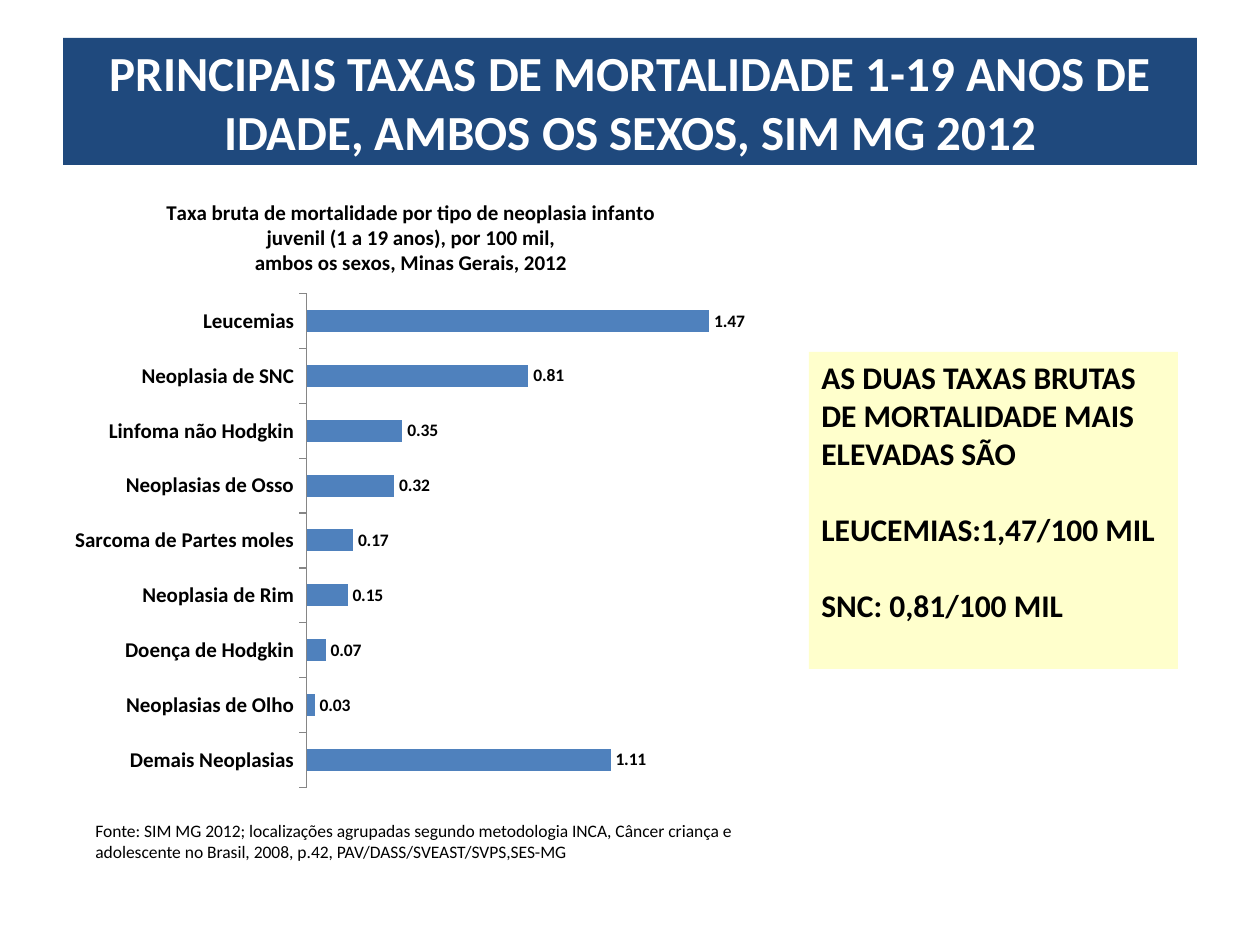
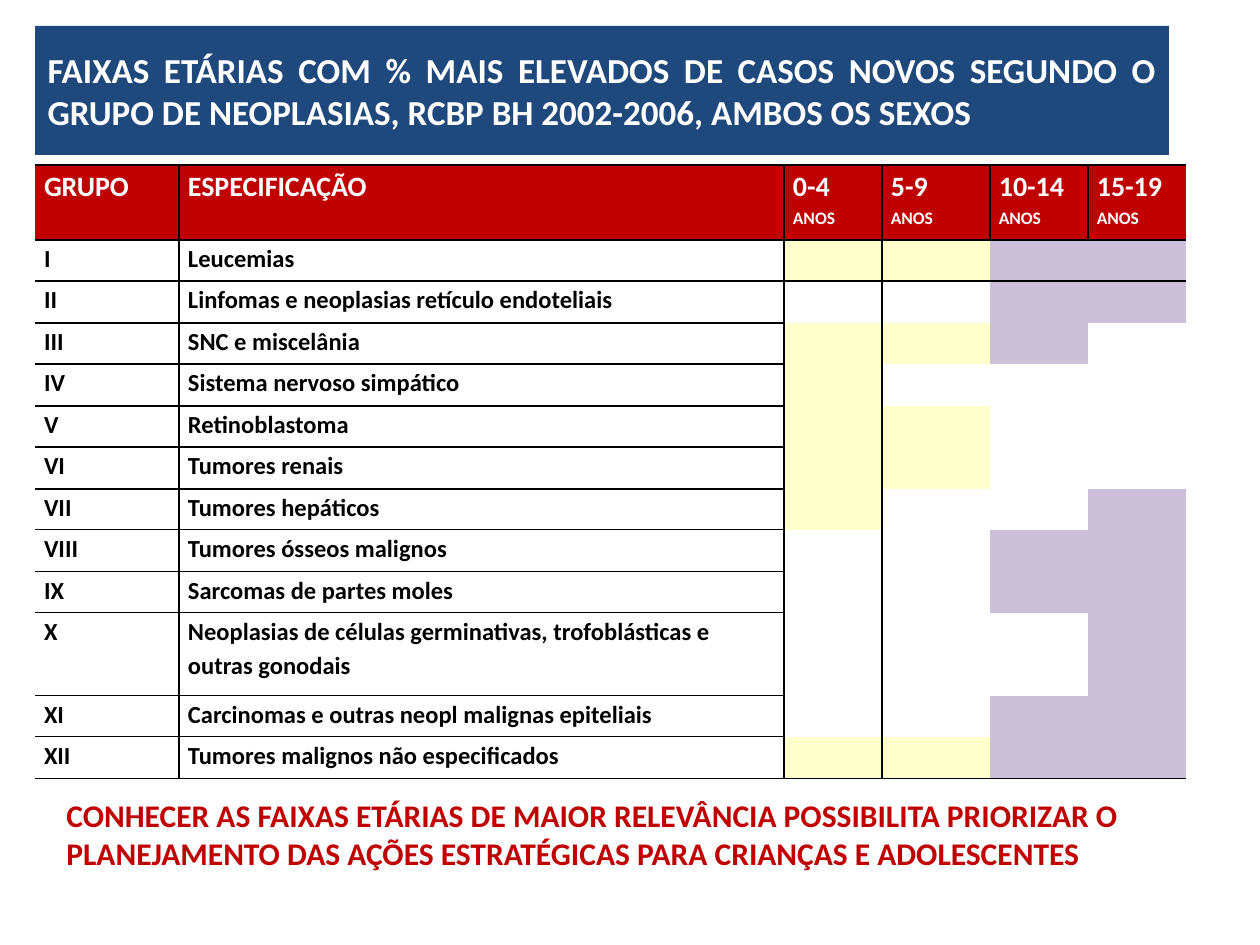
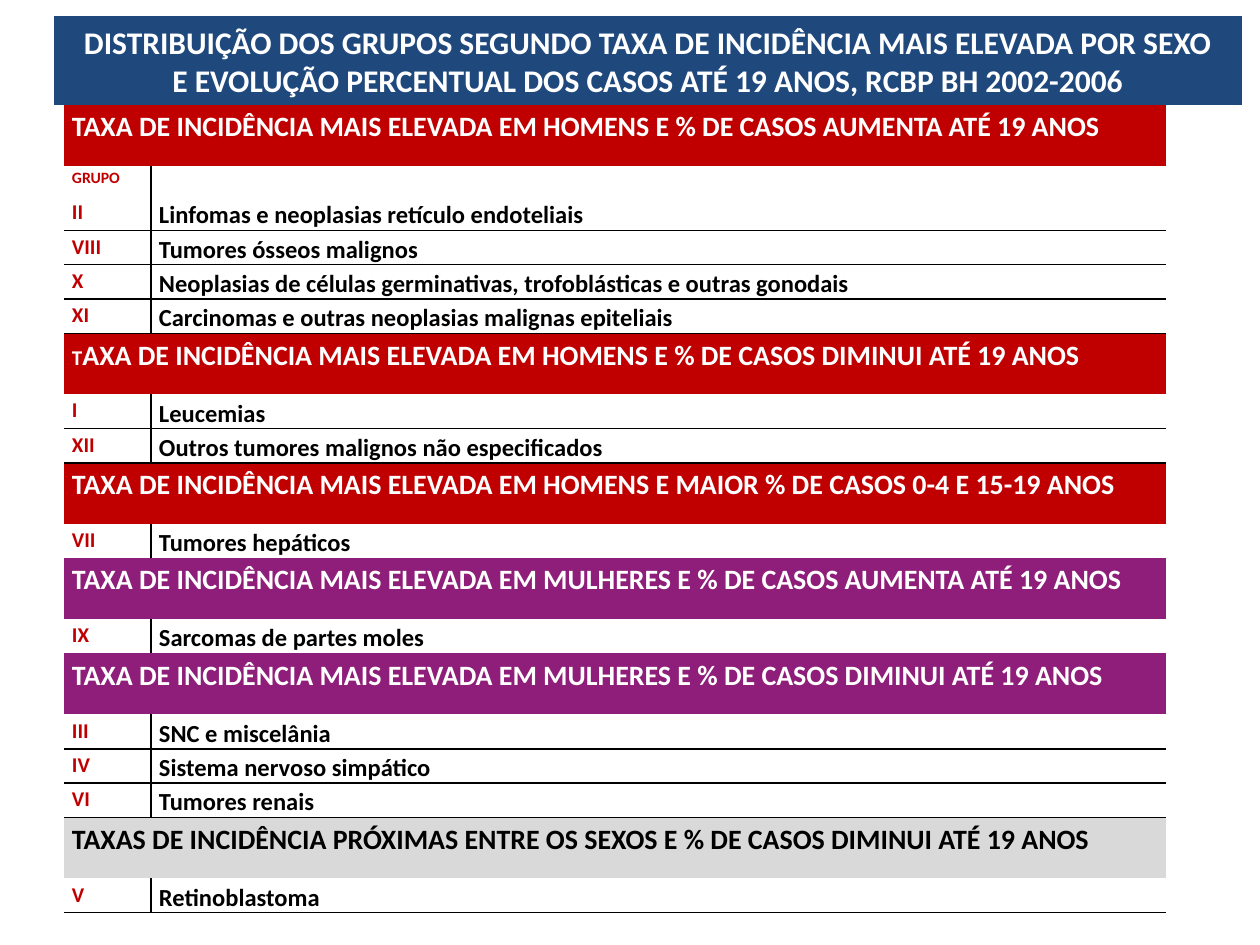
from dataclasses import dataclass

from lxml.etree import SubElement
from pptx import Presentation
from pptx.chart.data import CategoryChartData
from pptx.dml.color import RGBColor
from pptx.enum.chart import (XL_CHART_TYPE, XL_LABEL_POSITION, XL_TICK_LABEL_POSITION,
                             XL_TICK_MARK)
from pptx.enum.shapes import MSO_SHAPE
from pptx.enum.text import MSO_ANCHOR, MSO_AUTO_SIZE, PP_ALIGN
from pptx.oxml import parse_xml
from pptx.oxml.ns import nsdecls, qn
from pptx.util import Emu, Pt


@dataclass(frozen=True)
class Theme:
    font: str = "Calibri"
    # Colours
    navy: str = "1F497D"
    red: str = "C00000"
    purple: str = "8E1E79"
    gray: str = "D9D9D9"
    axis: str = "868686"
    bar: str = "4F81BD"
    yellow: str = "FFFFCC"
    lilac: str = "CCC0D9"
    black: str = "000000"
    white: str = "FFFFFF"
    # Type sizes
    headline: int = 28
    subhead: int = 20
    callout: int = 18
    head: int = 16
    row: int = 14
    label: int = 12
    note: int = 10
    tiny: int = 9


T = Theme()
PX_PER_INCH = 126
TITLE_ONLY = 5
NO_STYLE = "{2D5ABB26-0587-4C30-8999-92F81FD0307C}"


def px(n):
    return Emu(round(n * 914400 / PX_PER_INCH))


def rgb(code):
    return RGBColor.from_string(code)


def style(font, size, color, bold=True):
    font.name = T.font
    font.size = Pt(size)
    font.bold = bold
    font.color.rgb = rgb(color)


class Deck:
    """Holds the presentation and the slide being built."""

    def __init__(self):
        self.prs = Presentation()
        self.prs.slide_width = px(1260)
        self.prs.slide_height = px(945)
        self.slide = None

    def add_slide(self):
        self.slide = self.prs.slides.add_slide(self.prs.slide_layouts[TITLE_ONLY])

    def put_text(self, sp, lines, size, color, bold=True, align=PP_ALIGN.LEFT,
                 anchor=MSO_ANCHOR.TOP, gap=0):
        tf = sp.text_frame
        tf.word_wrap = True
        tf.auto_size = MSO_AUTO_SIZE.NONE
        tf.vertical_anchor = anchor
        for i, line in enumerate(lines):
            p = tf.add_paragraph() if i else tf.paragraphs[0]
            p.text = line
            p.alignment = align
            p.space_before = Pt(gap if i else 0)
            style(p.font, size, color, bold)

    def title(self, box, lines, size, align=PP_ALIGN.CENTER):
        sp = self.slide.shapes.title
        sp.left, sp.top, sp.width, sp.height = map(px, box)
        sp.fill.solid()
        sp.fill.fore_color.rgb = rgb(T.navy)
        self.put_text(sp, lines, size, T.white, align=align, anchor=MSO_ANCHOR.MIDDLE)

    def panel(self, box, lines, size, color=T.black, fill=T.white, bold=True, gap=0):
        sp = self.slide.shapes.add_shape(MSO_SHAPE.RECTANGLE, *map(px, box))
        sp.shadow.inherit = False
        sp.fill.solid()
        sp.fill.fore_color.rgb = rgb(fill)
        sp.line.fill.background()
        self.put_text(sp, lines, size, color, bold, gap=gap)

    def table(self, left, top, widths, heights):
        frame = self.slide.shapes.add_table(
            len(heights), len(widths), px(left), px(top), px(sum(widths)), px(sum(heights)))
        tbl = frame.table
        tbl.first_row = tbl.horz_banding = False
        frame._element.find(".//" + qn("a:tableStyleId")).text = NO_STYLE
        for col, width in zip(tbl.columns, widths):
            col.width = px(width)
        for row, height in zip(tbl.rows, heights):
            row.height = px(height)
        return tbl

    def cell(self, cell, lines=(), color=T.black, fill=T.white, sides="", inset=9):
        """Each line is a list of (text, size) runs; sides is any of L, R, T, B."""
        cell.fill.solid()
        cell.fill.fore_color.rgb = rgb(fill)
        cell.margin_left = cell.margin_right = px(inset)
        cell.margin_top = cell.margin_bottom = 0
        tf = cell.text_frame
        tf.paragraphs[0].font.size = Pt(T.tiny)
        for i, runs in enumerate(lines):
            p = tf.add_paragraph() if i else tf.paragraphs[0]
            p.line_spacing = 1.15
            for text, size in runs:
                r = p.add_run()
                r.text = text
                style(r.font, size, color)
        tc_pr = cell._tc.get_or_add_tcPr()
        for i, side in enumerate(s for s in "LRTB" if s in sides):
            tc_pr.insert(i, parse_xml(
                f'<a:ln{side} {nsdecls("a")} w="12700"><a:solidFill>'
                f'<a:srgbClr val="{T.black}"/></a:solidFill></a:ln{side}>'))

    def bar_chart(self, box, title, data, plot):
        chart_data = CategoryChartData(number_format="0.00")
        chart_data.categories = list(data)
        chart_data.add_series("Series 1", list(data.values()))
        chart = self.slide.shapes.add_chart(
            XL_CHART_TYPE.BAR_CLUSTERED, *map(px, box), chart_data).chart
        style(chart.font, T.note, T.black, bold=False)
        chart.has_legend = False

        tf = chart.chart_title.text_frame
        for i, line in enumerate(title):
            p = tf.add_paragraph() if i else tf.paragraphs[0]
            p.text = line
            style(p.font, T.label, T.black)
        chart.chart_title.include_in_layout = False

        cat = chart.category_axis
        cat.reverse_order = True
        cat.major_tick_mark = XL_TICK_MARK.OUTSIDE
        cat.tick_label_position = XL_TICK_LABEL_POSITION.LOW
        cat.format.line.color.rgb = rgb(T.axis)
        style(cat.tick_labels.font, T.label, T.black)
        val = chart.value_axis
        val.minimum_scale, val.maximum_scale = 0, 1.6
        val.has_major_gridlines = False
        val.visible = False

        bars = chart.plots[0]
        bars.vary_by_categories = False
        bars.gap_width = 150
        fill = bars.series[0].format.fill
        fill.solid()
        fill.fore_color.rgb = rgb(T.bar)
        bars.has_data_labels = True
        labels = bars.data_labels
        labels.show_value = True
        labels.number_format = "0.00"
        labels.number_format_is_linked = False
        labels.position = XL_LABEL_POSITION.OUTSIDE_END
        style(labels.font, T.note, T.black)

        # Fixed inner plot area, as fractions of the chart
        area = chart._chartSpace.find(".//" + qn("c:plotArea"))
        for old in area.findall(qn("c:layout")):
            area.remove(old)
        layout = parse_xml(f'<c:layout {nsdecls("c")}><c:manualLayout/></c:layout>')
        area.insert(0, layout)
        values = dict(layoutTarget="inner", xMode="edge", yMode="edge",
                      **dict(zip("xywh", plot)))
        for tag, value in values.items():
            SubElement(layout[0], qn("c:" + tag)).set("val", str(value))


def mortality_slide(deck):
    deck.add_slide()
    deck.title((63, 38, 1134, 127), [
        "PRINCIPAIS TAXAS DE MORTALIDADE 1-19 ANOS DE IDADE, AMBOS OS SEXOS, SIM MG 2012",
    ], T.headline)
    rates = {
        "Leucemias": 1.47,
        "Neoplasia de SNC": 0.81,
        "Linfoma não Hodgkin": 0.35,
        "Neoplasias de Osso": 0.32,
        "Sarcoma de Partes moles": 0.17,
        "Neoplasia de Rim": 0.15,
        "Doença de Hodgkin": 0.07,
        "Neoplasias de Olho": 0.03,
        "Demais Neoplasias": 1.11,
    }
    deck.bar_chart((63, 175, 696, 625), [
        "Taxa bruta de mortalidade por tipo de neoplasia infanto "
        "juvenil (1 a 19 anos), por 100 mil,",
        "ambos os sexos, Minas Gerais, 2012",
    ], rates, plot=(0.35, 0.19, 0.63, 0.79))
    deck.panel((83, 814, 679, 55), [
        "Fonte: SIM MG 2012; localizações agrupadas segundo metodologia INCA, Câncer criança e",
        "adolescente no Brasil, 2008, p.42, PAV/DASS/SVEAST/SVPS,SES-MG",
    ], T.note, bold=False)
    deck.panel((809, 352, 369, 317), [
        "AS DUAS TAXAS BRUTAS DE MORTALIDADE MAIS ELEVADAS SÃO",
        "LEUCEMIAS:1,47/100 MIL",
        "SNC: 0,81/100 MIL",
    ], T.callout, fill=T.yellow, gap=22)


def age_slide(deck):
    deck.add_slide()
    deck.title((35, 26, 1134, 129), [
        "FAIXAS ETÁRIAS COM % MAIS ELEVADOS DE CASOS NOVOS SEGUNDO O GRUPO DE NEOPLASIAS, "
        "RCBP BH 2002-2006, AMBOS OS SEXOS",
    ], T.subhead, PP_ALIGN.JUSTIFY)

    # One mark per age band: Y yellow, L lilac, - none
    shades = {"Y": T.yellow, "L": T.lilac, "-": T.white}
    groups = [
        ("I", "Leucemias", "YYLL"),
        ("II", "Linfomas e neoplasias retículo endoteliais", "--LL"),
        ("III", "SNC e miscelânia", "YYL-"),
        ("IV", "Sistema nervoso simpático", "Y---"),
        ("V", "Retinoblastoma", "YY--"),
        ("VI", "Tumores renais", "YY--"),
        ("VII", "Tumores hepáticos", "Y--L"),
        ("VIII", "Tumores ósseos malignos", "--LL"),
        ("IX", "Sarcomas de partes moles", "--LL"),
        ("X", "Neoplasias de células germinativas, trofoblásticas e outras gonodais", "---L"),
        ("XI", "Carcinomas e outras neopl malignas epiteliais", "--LL"),
        ("XII", "Tumores malignos não especificados", "YYLL"),
    ]
    heights = [75] + [83 if g[0] == "X" else 41 + i % 2 for i, g in enumerate(groups)]
    tbl = deck.table(35, 165, [144, 605, 98, 108, 98, 98], heights)

    heads = [[[(name, T.head)]] for name in ("GRUPO", "ESPECIFICAÇÃO")]
    heads += [[[(ages, T.head)], [("ANOS", T.note)]]
              for ages in ("0-4", "5-9", "10-14", "15-19")]
    for c, lines in enumerate(heads):
        sides = "TB" + "L" * (c > 0) + "R" * (c < 5)
        deck.cell(tbl.cell(0, c), lines, T.white, T.red, sides)
    for r, (number, name, marks) in enumerate(groups, 1):
        deck.cell(tbl.cell(r, 0), [[(number, T.row)]], sides="RTB")
        deck.cell(tbl.cell(r, 1), [[(name, T.row)]], sides="LRTB")
        for c, mark in enumerate(marks, 2):
            sides = "L" * (c == 2) + "T" * (r == 1) + "B" * (r == len(groups))
            deck.cell(tbl.cell(r, c), fill=shades[mark], sides=sides)

    deck.panel((54, 790, 1189, 89), [
        "CONHECER AS FAIXAS ETÁRIAS DE MAIOR RELEVÂNCIA POSSIBILITA PRIORIZAR O "
        "PLANEJAMENTO DAS AÇÕES ESTRATÉGICAS PARA CRIANÇAS E ADOLESCENTES",
    ], T.callout, T.red)


def incidence_slide(deck):
    deck.add_slide()
    deck.title((54, 16, 1188, 89), [
        "DISTRIBUIÇÃO DOS GRUPOS SEGUNDO TAXA DE INCIDÊNCIA MAIS ELEVADA POR SEXO",
        "E EVOLUÇÃO PERCENTUAL DOS CASOS ATÉ 19 ANOS, RCBP BH 2002-2006",
    ], T.callout)

    men = "TAXA DE INCIDÊNCIA MAIS ELEVADA EM HOMENS E "
    women = "TAXA DE INCIDÊNCIA MAIS ELEVADA EM MULHERES E "
    rises, falls = "% DE CASOS AUMENTA ATÉ 19 ANOS", "% DE CASOS DIMINUI ATÉ 19 ANOS"
    # Heading runs, band fill, heading colour, groups
    sections = [
        ([(men + rises, T.head)], T.red, T.white, [
            ("II", "Linfomas e neoplasias retículo endoteliais"),
            ("VIII", "Tumores ósseos malignos"),
            ("X", "Neoplasias de células germinativas, trofoblásticas e outras gonodais"),
            ("XI", "Carcinomas e outras neoplasias malignas epiteliais")]),
        ([(men[0], T.label), (men[1:] + falls, T.head)], T.red, T.white, [
            ("I", "Leucemias"),
            ("XII", "Outros tumores malignos não especificados")]),
        ([(men + "MAIOR % DE CASOS 0-4 E 15-19 ANOS", T.head)], T.red, T.white, [
            ("VII", "Tumores hepáticos")]),
        ([(women + rises, T.head)], T.purple, T.white, [
            ("IX", "Sarcomas de partes moles")]),
        ([(women + falls, T.head)], T.purple, T.white, [
            ("III", "SNC e miscelânia"),
            ("IV", "Sistema nervoso simpático"),
            ("VI", "Tumores renais")]),
        ([("TAXAS DE INCIDÊNCIA PRÓXIMAS ENTRE OS SEXOS E " + falls, T.head)],
         T.gray, T.black, [("V", "Retinoblastoma")]),
    ]
    heights = []
    for i, section in enumerate(sections):
        heights += [61] + [30] * (i == 0) + [34] * len(section[3])
    tbl = deck.table(64, 105, [87, 1015], heights)

    r = 0
    for i, (heading, fill, color, groups) in enumerate(sections):
        tbl.cell(r, 0).merge(tbl.cell(r, 1))
        deck.cell(tbl.cell(r, 0), [heading], color, fill, inset=8)
        r += 1
        if i == 0:
            deck.cell(tbl.cell(r, 0), [[("GRUPO", T.tiny)]], T.red, sides="R", inset=8)
            deck.cell(tbl.cell(r, 1), sides="L", inset=8)
            r += 1
        for j, (number, name) in enumerate(groups):
            is_last = j == len(groups) - 1 and i < len(sections) - 1
            rules = "T" * (j > 0) + "B" * (not is_last)
            deck.cell(tbl.cell(r, 0), [[(number, T.label)]], T.red,
                      sides="R" + rules, inset=8)
            deck.cell(tbl.cell(r, 1), [[(name, T.row)]], sides="L" + rules, inset=8)
            r += 1


def main():
    deck = Deck()
    mortality_slide(deck)
    age_slide(deck)
    incidence_slide(deck)
    deck.prs.save("out.pptx")


if __name__ == "__main__":
    main()
